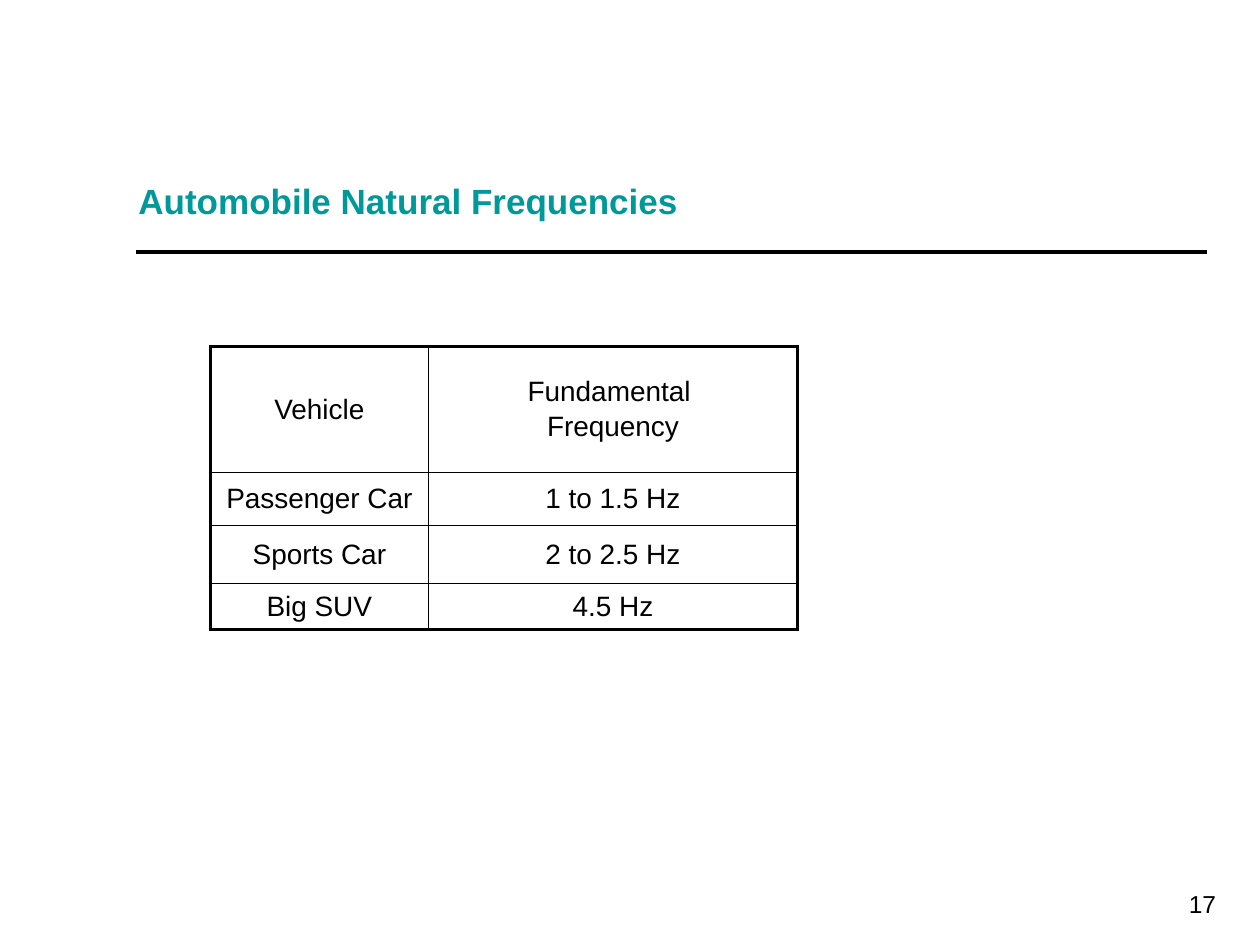
from dataclasses import dataclass

from lxml.etree import SubElement
from pptx import Presentation
from pptx.dml.color import RGBColor
from pptx.enum.shapes import MSO_CONNECTOR
from pptx.enum.text import MSO_ANCHOR as Anchor, PP_ALIGN as Align
from pptx.oxml.ns import qn
from pptx.util import Inches, Pt


@dataclass(frozen=True)
class Theme:
    font: str = "Arial"
    ink: str = "010000"
    line: str = "000000"
    title: str = "009999"
    title_size: float = 20
    table_size: float = 16
    number_size: float = 14
    thick: float = 2.25
    thin: float = 1


THEME = Theme()

ROWS = [
    ("Vehicle", "Fundamental \nFrequency"),
    ("Passenger Car", "1 to 1.5 Hz"),
    ("Sports Car", "2 to 2.5 Hz"),
    ("Big SUV", "4.5 Hz"),
]
COLUMN_WIDTHS = [1.73, 2.93]
ROW_HEIGHTS = [1, 0.42, 0.46, 0.35]


def style_paragraph(paragraph, size, color, align, bold=False):
    paragraph.alignment = align
    paragraph.font.name = THEME.font
    paragraph.font.size = Pt(size)
    paragraph.font.bold = bold
    paragraph.font.color.rgb = RGBColor.from_string(color)


def add_text(slide, text, box, size, color, align, bold=False):
    """Add a vertically centred line of text and return its paragraph."""
    shape = slide.shapes.add_textbox(*map(Inches, box))
    frame = shape.text_frame
    frame.word_wrap = True
    frame.vertical_anchor = Anchor.MIDDLE
    frame.text = text
    style_paragraph(frame.paragraphs[0], size, color, align, bold)
    return frame.paragraphs[0]


def add_rule(slide, left, right, top):
    rule = slide.shapes.add_connector(
        MSO_CONNECTOR.STRAIGHT, *map(Inches, (left, top, right, top)))
    rule.line.color.rgb = RGBColor.from_string(THEME.line)
    rule.line.width = Pt(THEME.thick)
    SubElement(rule._element.spPr, qn("a:effectLst"))


def set_borders(cell, outer_sides):
    """Draw all four borders, thick on the sides at the table's edge."""
    properties = cell._tc.get_or_add_tcPr()
    for side in "LRTB":
        width = THEME.thick if side in outer_sides else THEME.thin
        border = SubElement(properties, qn(f"a:ln{side}"), w=str(Pt(width)))
        fill = SubElement(border, qn("a:solidFill"))
        SubElement(fill, qn("a:srgbClr"), val=THEME.line)


def add_frequency_table(slide, left, top):
    size = sum(COLUMN_WIDTHS), sum(ROW_HEIGHTS)
    table = slide.shapes.add_table(
        len(ROWS), len(COLUMN_WIDTHS), *map(Inches, (left, top, *size))).table
    table.first_row = table.horz_banding = False
    for column, width in zip(table.columns, COLUMN_WIDTHS):
        column.width = Inches(width)
    for row, height in zip(table.rows, ROW_HEIGHTS):
        row.height = Inches(height)
    for row_index, texts in enumerate(ROWS):
        for column_index, text in enumerate(texts):
            cell = table.cell(row_index, column_index)
            cell.text = text
            cell.vertical_anchor = Anchor.MIDDLE
            for paragraph in cell.text_frame.paragraphs:
                style_paragraph(paragraph, THEME.table_size, THEME.ink, Align.CENTER)
                paragraph.space_before = Pt(0.15 * THEME.table_size)
            outer_sides = "L" if column_index == 0 else "R"
            if row_index == 0:
                outer_sides += "T"
            elif row_index == len(ROWS) - 1:
                outer_sides += "B"
            set_borders(cell, outer_sides)
            cell.fill.background()


def main():
    presentation = Presentation()
    presentation.slide_width, presentation.slide_height = Inches(10), Inches(7.5)
    slide = presentation.slides.add_slide(presentation.slide_layouts[6])
    add_text(slide, "17", (7.67, 6.92, 2.08, 0.5), THEME.number_size,
             THEME.ink, Align.RIGHT)
    title = add_text(slide, "Automobile Natural Frequencies", (1, 0.92, 8.67, 1.42),
                     THEME.title_size, THEME.title, Align.LEFT, bold=True)
    title.line_spacing = 0.7
    add_rule(slide, 1.08, 9.58, 2)
    add_frequency_table(slide, 1.67, 2.75)
    presentation.save("out.pptx")


if __name__ == "__main__":
    main()
